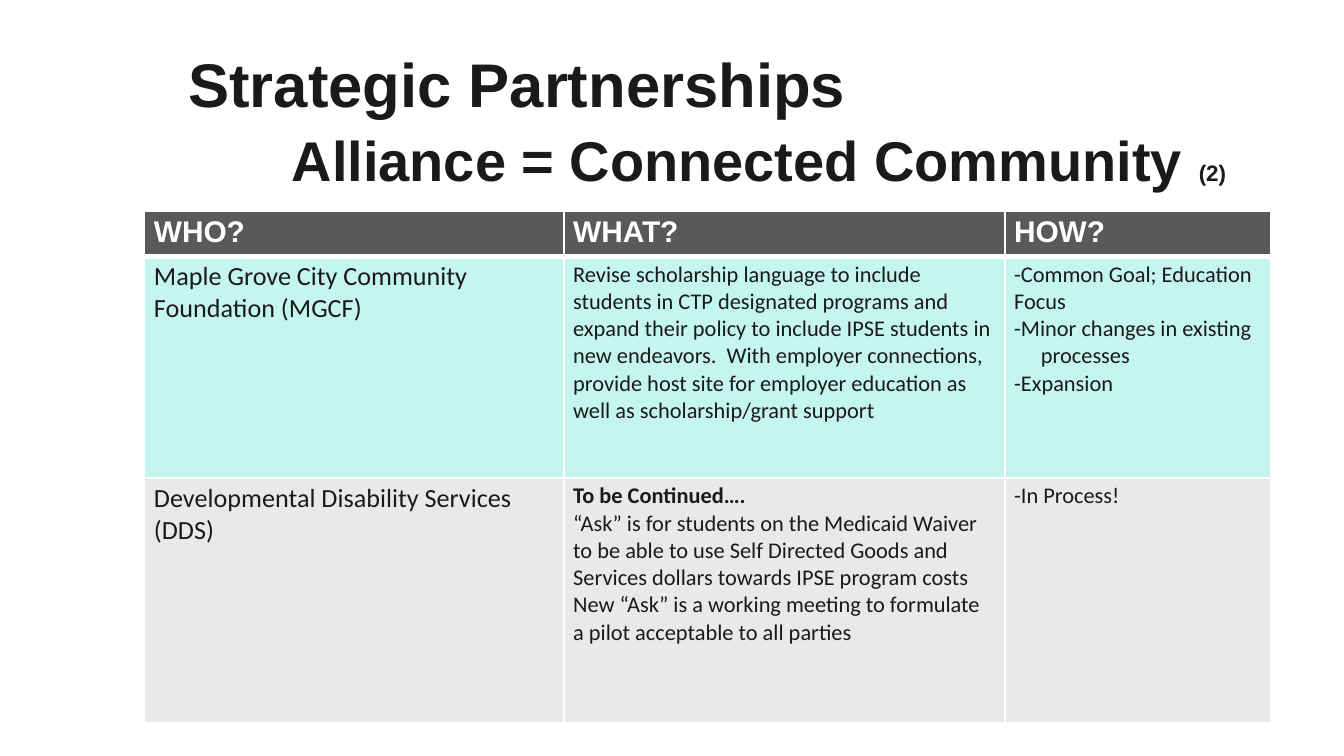
import dataclasses
import typing

import pptx
import pptx.dml.color
import pptx.enum.text
import pptx.oxml
import pptx.oxml.ns
import pptx.util

Pt = pptx.util.Pt
COLORS = {"ink": "1A1A1A", "white": "FFFFFF", "header": "595959", "mint": "C5F5EF", "gray": "E9E9E9"}
COL_WIDTHS = (224.6, 236.2, 142.6)
ROW_HEIGHTS = (22.8, 118.8, 131)


@dataclasses.dataclass(frozen=True)
class Run:
    text: str
    size: float = 12
    bold: bool = False
    font: str = "Calibri"
    color: str = "ink"


@dataclasses.dataclass(frozen=True)
class Para:
    runs: typing.Tuple[Run, ...]
    left: float = 0
    indent: float = 0
    before: float = 0


@dataclasses.dataclass(frozen=True)
class Row:
    fill: str
    cells: typing.Tuple[typing.Tuple[Para, ...], ...]


def body(text: str, size: float = 12, bold: bool = False, hang: float = 0) -> Para:
    return Para((Run(text, size, bold),), left=hang, indent=-hang)


def heading(text: str) -> typing.Tuple[Para, ...]:
    return (Para((Run(text, 16, True, "Arial", "white"),)),)


def title_run(text: str, size: float) -> Run:
    return Run(text, size, True, "Arial")


TITLE = (
    Para((title_run("Strategic Partnerships", 33),)),
    Para((title_run("Alliance = Connected Community ", 30), title_run("(2)", 12)), left=55.4, before=3),
)

ROWS = (
    Row("header", tuple(heading(t) for t in ("WHO?", "WHAT?", "HOW?"))),
    Row("mint", (
        (body("Maple Grove City Community Foundation (MGCF)", 14),),
        (body("Revise scholarship language to include students in CTP designated programs and "
              "expand their policy to include IPSE students in new endeavors.  With employer "
              "connections, provide host site for employer education as well as "
              "scholarship/grant support"),),
        (body("-Common Goal; Education Focus"),
         body("-Minor changes in existing processes", hang=14.4),
         body("-Expansion", hang=14.4)),
    )),
    Row("gray", (
        (body("Developmental Disability Services (DDS)", 14),),
        (body("To be Continued….", bold=True),
         body("“Ask” is for students on the Medicaid Waiver to be able to use Self Directed "
              "Goods and Services dollars towards IPSE program costs"),
         body("New “Ask” is a working meeting to formulate a pilot acceptable to all parties")),
        (body("-In Process!"),),
    )),
)


def rgb(name: str) -> pptx.dml.color.RGBColor:
    return pptx.dml.color.RGBColor.from_string(COLORS[name])


def write(tf, paras: typing.Sequence[Para]) -> None:
    for i, para in enumerate(paras):
        p = tf.add_paragraph() if i else tf.paragraphs[0]
        p.space_before = Pt(para.before)
        pPr = p._p.get_or_add_pPr()
        pPr.set("marL", str(Pt(para.left)))
        pPr.set("indent", str(Pt(para.indent)))
        for run in para.runs:
            r = p.add_run()
            r.text = run.text
            r.font.size = Pt(run.size)
            r.font.bold = run.bold
            r.font.name = run.font
            r.font.color.rgb = rgb(run.color)


def add_border(cell, side: str, width: float) -> None:
    ns = pptx.oxml.ns.nsdecls("a")
    cell._tc.get_or_add_tcPr().append(pptx.oxml.parse_xml(
        f'<a:{side} {ns} w="{Pt(width)}"><a:solidFill><a:srgbClr val="{COLORS["white"]}"/>'
        f'</a:solidFill></a:{side}>'))


def add_title(s) -> None:
    sp = s.shapes.add_textbox(Pt(93.8), Pt(17.3), Pt(586.8), Pt(85.7))
    tf = sp.text_frame
    tf.word_wrap = True
    tf.vertical_anchor = pptx.enum.text.MSO_ANCHOR.TOP
    tf.margin_left = tf.margin_right = tf.margin_top = tf.margin_bottom = Pt(7.2)
    write(tf, TITLE)


def add_partners(s) -> None:
    table = s.shapes.add_table(len(ROWS), len(COL_WIDTHS), Pt(77.5), Pt(113),
                               Pt(sum(COL_WIDTHS)), Pt(sum(ROW_HEIGHTS))).table
    table.horz_banding = False
    for column, width in zip(table.columns, COL_WIDTHS):
        column.width = Pt(width)
    for i, (row, height) in enumerate(zip(ROWS, ROW_HEIGHTS)):
        table.rows[i].height = Pt(height)
        for j, paras in enumerate(row.cells):
            cell = table.cell(i, j)
            cell.margin_left = cell.margin_right = Pt(5)
            cell.margin_top = cell.margin_bottom = Pt(2.5)
            for side in ("lnL", "lnR", "lnT", "lnB"):
                thick = (i, side) in ((0, "lnB"), (1, "lnT"))
                add_border(cell, side, 3 if thick else 1)
            cell.fill.solid()
            cell.fill.fore_color.rgb = rgb(row.fill)
            write(cell.text_frame, paras)


def main() -> None:
    """Build the strategic partnerships slide."""
    prs = pptx.Presentation()
    prs.slide_width, prs.slide_height = Pt(720), Pt(405)
    s = prs.slides.add_slide(prs.slide_layouts[6])
    add_title(s)
    add_partners(s)
    prs.save("out.pptx")


if __name__ == "__main__":
    main()
